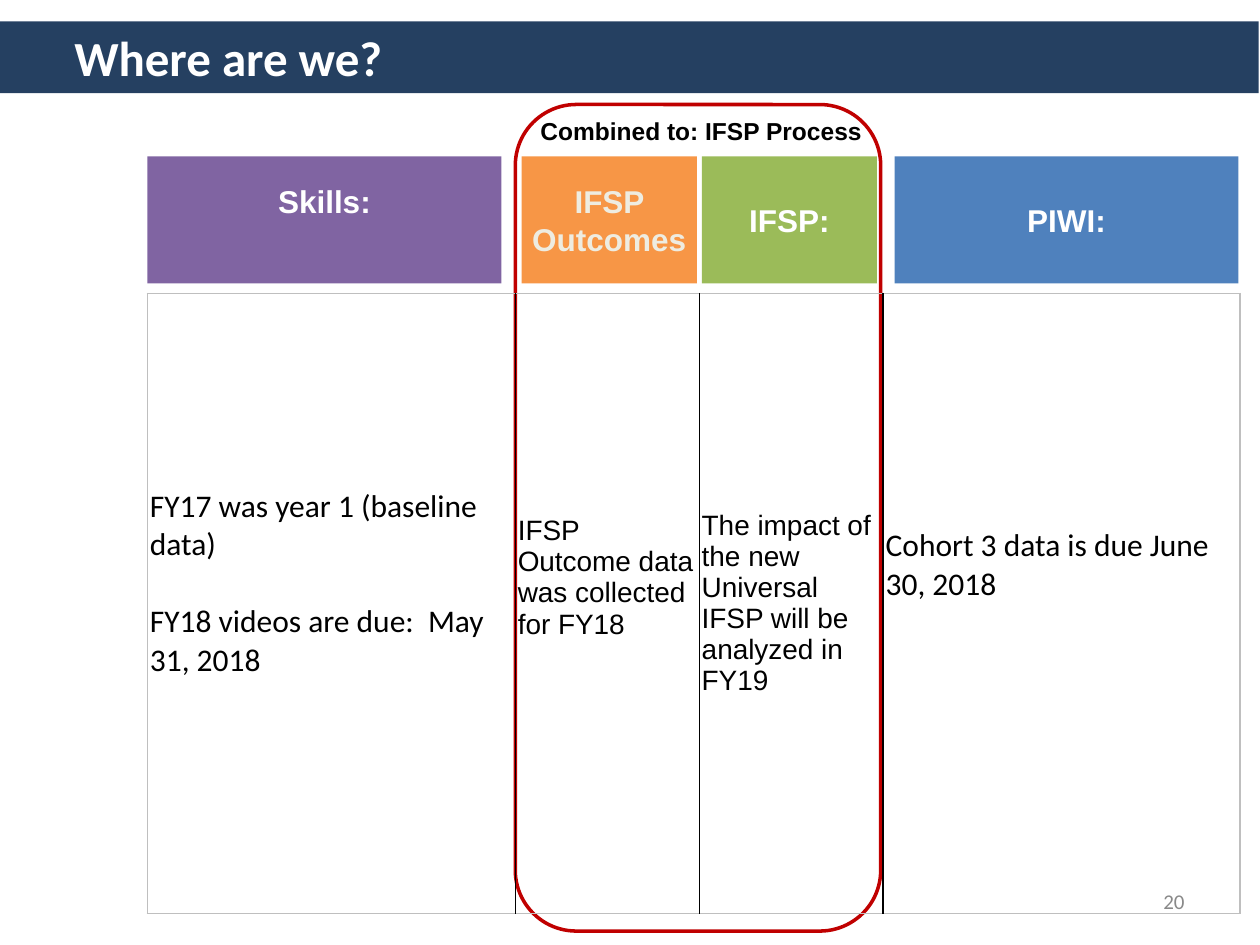
from dataclasses import dataclass
from typing import Optional

from lxml import etree
from pptx import Presentation
from pptx import util as u
from pptx.dml.color import RGBColor
from pptx.enum import shapes, text
from pptx.oxml import ns

NAVY = RGBColor(0x25, 0x40, 0x61)
PURPLE = RGBColor(0x80, 0x64, 0xA2)
ORANGE = RGBColor(0xF7, 0x96, 0x46)
GREEN = RGBColor(0x9B, 0xBB, 0x59)
BLUE = RGBColor(0x4F, 0x81, 0xBD)
RED = RGBColor(0xC0, 0x00, 0x00)
CREAM = RGBColor(0xEE, 0xEC, 0xE1)
WHITE = RGBColor(0xFF, 0xFF, 0xFF)
BLACK = RGBColor(0x00, 0x00, 0x00)
GRAY = RGBColor(0x89, 0x89, 0x89)
SILVER = RGBColor(0xBF, 0xBF, 0xBF)

LEFT, MIDDLE, RIGHT = text.PP_ALIGN.LEFT, text.PP_ALIGN.CENTER, text.PP_ALIGN.RIGHT


@dataclass(frozen=True)
class Style:
    font: str
    size: int
    color: RGBColor = BLACK
    bold: bool = False
    align: text.PP_ALIGN = LEFT


@dataclass(frozen=True)
class Heading:
    wording: str
    left: float
    width: float
    fill: RGBColor
    color: RGBColor = WHITE
    side_inset: float = 0.1
    bottom_inset: float = 0.05


@dataclass(frozen=True)
class Status:
    paragraphs: tuple[str, ...]
    width: float
    style: Style
    space_after: int = 0
    bottom_inset: float = 0.05


BODY = Style("Calibri", 18)
NARROW = Style("Arial", 16)

HEADINGS = (
    Heading("Skills:", 1.17, 2.81, PURPLE, bottom_inset=0.35),
    Heading("IFSP:", 5.57, 1.39, GREEN, side_inset=0),
    Heading("PIWI:", 7.1, 2.73, BLUE),
    Heading("IFSP Outcomes", 4.14, 1.39, ORANGE, CREAM, side_inset=0),
)
STATUSES = (
    Status(("FY17 was year 1 (baseline data)", "FY18 videos are due:  May 31, 2018"),
           2.92, BODY, bottom_inset=0.37),
    Status(("IFSP Outcome data was collected for FY18",), 1.46, NARROW, 12, 0.46),
    Status(("The impact of the new Universal IFSP will be analyzed in FY19",),
           1.46, NARROW, 12),
    Status(("Cohort 3 data is due June 30, 2018",), 2.83, BODY, bottom_inset=0.66),
)


def write(frame, wording: str, style: Style) -> None:
    frame.text = wording
    frame.word_wrap = True
    for paragraph in frame.paragraphs:
        paragraph.alignment = style.align
        for run in paragraph.runs:
            run.font.name = style.font
            run.font.size = u.Pt(style.size)
            run.font.bold = style.bold
            run.font.color.rgb = style.color


def add_block(slide, kind, left: float, top: float, width: float, height: float,
              fill: Optional[RGBColor] = None):
    block = slide.shapes.add_shape(
        kind, u.Inches(left), u.Inches(top), u.Inches(width), u.Inches(height))
    block.shadow.inherit = False
    block.line.fill.background()
    if fill is None:
        block.fill.background()
    else:
        block.fill.solid()
        block.fill.fore_color.rgb = fill
    return block


def add_label(slide, left: float, top: float, width: float, height: float,
              wording: str, style: Style, anchor=text.MSO_ANCHOR.TOP) -> None:
    label = slide.shapes.add_textbox(
        u.Inches(left), u.Inches(top), u.Inches(width), u.Inches(height))
    write(label.text_frame, wording, style)
    label.text_frame.vertical_anchor = anchor


def add_title(slide) -> None:
    banner = add_block(slide, shapes.MSO_SHAPE.RECTANGLE, -0.01, 0.17, 10, 0.57, NAVY)
    write(banner.text_frame, "Where are we?", Style("Calibri", 28, WHITE, True))
    banner.text_frame.margin_left = u.Inches(0.6)
    banner.text_frame.vertical_anchor = text.MSO_ANCHOR.TOP


def add_heading(slide, heading: Heading) -> None:
    block = add_block(slide, shapes.MSO_SHAPE.RECTANGLE,
                      heading.left, 1.24, heading.width, 1.01, heading.fill)
    frame = block.text_frame
    write(frame, heading.wording, Style("Arial", 18, heading.color, True, MIDDLE))
    frame.margin_left = frame.margin_right = u.Inches(heading.side_inset)
    frame.margin_bottom = u.Inches(heading.bottom_inset)
    frame.vertical_anchor = text.MSO_ANCHOR.MIDDLE


def set_borders(cell, left: RGBColor, right: RGBColor) -> None:
    properties = cell._tc.get_or_add_tcPr()
    sides = {"lnL": left, "lnR": right, "lnT": SILVER, "lnB": SILVER}
    for side, color in sides.items():
        border = etree.SubElement(properties, ns.qn(f"a:{side}"), w=str(u.Pt(1)))
        fill = etree.SubElement(border, ns.qn("a:solidFill"))
        etree.SubElement(fill, ns.qn("a:srgbClr"), val=str(color))


def add_status_table(slide) -> None:
    total = sum(status.width for status in STATUSES)
    table = slide.shapes.add_table(
        1, len(STATUSES), u.Inches(1.17), u.Inches(2.33),
        u.Inches(total), u.Inches(4.92)).table
    table.first_row = table.horz_banding = False
    last = len(STATUSES) - 1
    for column, status in enumerate(STATUSES):
        table.columns[column].width = u.Inches(status.width)
        cell = table.cell(0, column)
        set_borders(cell, BLACK if column else SILVER, BLACK if column < last else SILVER)
        cell.fill.background()
        write(cell.text_frame, "\n".join(status.paragraphs), status.style)
        cell.margin_left = cell.margin_right = u.Inches(0.02)
        cell.margin_bottom = u.Inches(status.bottom_inset)
        cell.vertical_anchor = text.MSO_ANCHOR.MIDDLE
        for position, paragraph in enumerate(cell.text_frame.paragraphs):
            paragraph.space_before = u.Pt(22 if position else 0)
            paragraph.space_after = u.Pt(status.space_after)


def main() -> None:
    deck = Presentation()
    deck.slide_width, deck.slide_height = u.Inches(10), u.Inches(7.5)
    slide = deck.slides.add_slide(deck.slide_layouts[6])

    add_label(slide, 7.17, 6.95, 2.33, 0.4, "20",
              Style("Calibri", 12, GRAY, align=RIGHT), text.MSO_ANCHOR.MIDDLE)
    add_title(slide)
    for heading in HEADINGS:
        add_heading(slide, heading)

    process_frame = add_block(
        slide, shapes.MSO_SHAPE.ROUNDED_RECTANGLE, 4.09, 0.83, 2.9, 6.56)
    process_frame.line.color.rgb = RED
    process_frame.line.width = u.Pt(2)
    add_label(slide, 4.14, 0.87, 2.85, 0.34, "Combined to: IFSP Process",
              Style("Arial", 14, bold=True, align=MIDDLE))
    add_status_table(slide)

    deck.save("out.pptx")


if __name__ == "__main__":
    main()
